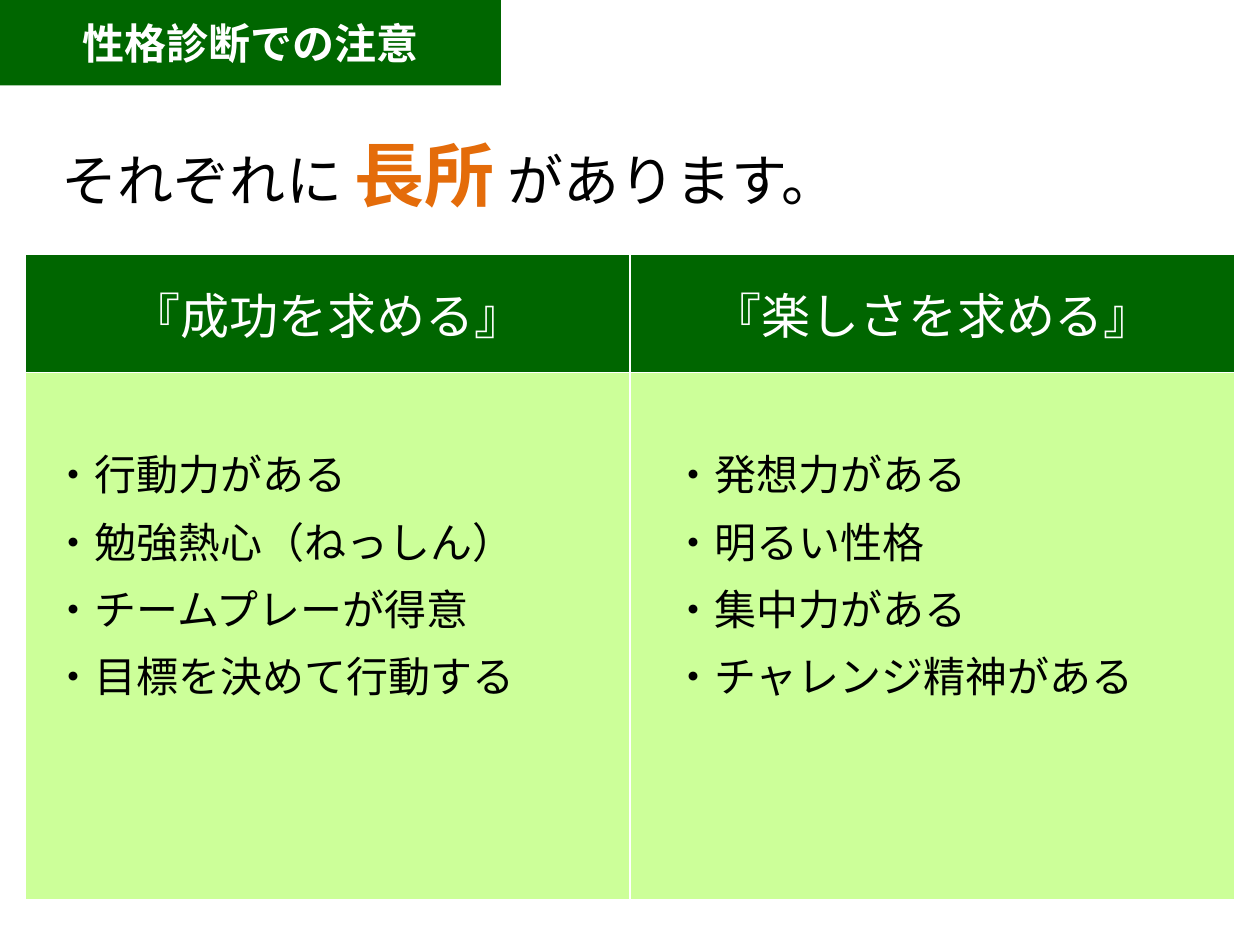
from dataclasses import dataclass
from lxml.etree import SubElement as Sub
from pptx import Presentation as Deck
from pptx.dml.color import RGBColor as Rgb
from pptx.enum.text import MSO_ANCHOR as Anchor, MSO_AUTO_SIZE as Fit, PP_ALIGN as Align
from pptx.oxml.ns import qn
from pptx.util import Cm, Pt


@dataclass(frozen=True)
class Theme:
    face: str = "Noto Sans CJK JP"
    white: str = "FFFFFF"
    black: str = "000000"
    green: str = "006600"
    pale: str = "CCFF99"
    orange: str = "E46C0A"
    small: int = 24
    head: int = 28
    lead: int = 32
    big: int = 40
    line: float = 28.8
    gap: float = 9.6


def apply(item, form):
    for key, value in form.items():
        setattr(item, key, value)


class Page:
    def __init__(self, theme, slide):
        self.theme, self.slide = theme, slide

    def place(self, shape, box):
        names = ("left", "top", "width", "height")
        apply(shape, dict(zip(names, map(Cm, box))))

    def frame(self, shape, anchor):
        form = {"word_wrap": True, "auto_size": Fit.NONE, "vertical_anchor": anchor}
        apply(shape.text_frame, form)
        return shape.text_frame

    def words(self, para, text, size, color, bold=False):
        run = para.add_run()
        run.text = text
        apply(run.font, {"name": self.theme.face, "size": Pt(size), "bold": bold})
        run.font.color.rgb = Rgb.from_string(color)
        Sub(run.font._element, qn("a:ea"), typeface=self.theme.face)

    def paint(self, item, color):
        item.fill.solid()
        item.fill.fore_color.rgb = Rgb.from_string(color)

    def title(self, text, box):
        shape = self.slide.shapes.title
        self.place(shape, box)
        self.paint(shape, self.theme.green)
        para = self.frame(shape, Anchor.MIDDLE).paragraphs[0]
        para.alignment = Align.CENTER
        self.words(para, text, self.theme.small, self.theme.white, True)

    def lead(self, parts, box):
        shape = self.slide.shapes.add_textbox(*map(Cm, box))
        para = self.frame(shape, Anchor.MIDDLE).paragraphs[0]
        for part in parts:
            self.words(para, *part)

    def list(self, index, lines, box):
        shape = self.slide.placeholders[index]
        self.place(shape, box)
        frame = self.frame(shape, Anchor.TOP)
        form = {"line_spacing": Pt(self.theme.line), "space_after": Pt(0)}
        for row, text in enumerate(lines):
            para = frame.add_paragraph() if row else frame.paragraphs[0]
            apply(para, form | {"space_before": Pt(self.theme.gap if row else 0)})
            props = para._p.get_or_add_pPr()
            props.set("marL", "0")
            props.set("indent", "0")
            Sub(props, qn("a:buNone"))
            self.words(para, text, self.theme.small, self.theme.black)

    def edge(self, cell):
        props = cell._tc.get_or_add_tcPr()
        for side in "LRTB":
            line = Sub(props, qn(f"a:ln{side}"), w=str(Pt(1)))
            fill = Sub(line, qn("a:solidFill"))
            Sub(fill, qn("a:srgbClr"), val=self.theme.white)

    def table(self, heads, box, rows):
        shape = self.slide.shapes.add_table(len(rows), len(heads), *map(Cm, box))
        tree = self.slide.shapes._spTree
        tree.insert(2, shape._element)
        grid = shape.table
        grid.horz_banding = False
        for row, high in zip(grid.rows, rows):
            row.height = Cm(high)
        for col, text in enumerate(heads):
            for row, color in enumerate((self.theme.green, self.theme.pale)):
                cell = grid.cell(row, col)
                self.edge(cell)
                self.paint(cell, color)
            top = grid.cell(0, col)
            top.vertical_anchor = Anchor.MIDDLE
            para = top.text_frame.paragraphs[0]
            para.alignment = Align.CENTER
            self.words(para, text, self.theme.head, self.theme.white)


def main():
    deck = Deck()
    apply(deck, {"slide_width": Cm(25.4), "slide_height": Cm(19.05)})
    theme = Theme()
    page = Page(theme, deck.slides.add_slide(deck.slide_layouts[3]))
    page.title("性格診断での注意", (0, 0, 10.1, 1.72))
    page.lead([
        ("それぞれに ", theme.lead, theme.black),
        ("長所", theme.big, theme.orange, True),
        (" があります。", theme.lead, theme.black),
    ], (1, 2.52, 23.4, 1.96))
    rows = (2.38, 10.62)
    page.table(["『成功を求める』", "『楽しさを求める』"], (0.5, 5.13, 24.4, sum(rows)), rows)
    page.list(1, ["・行動力がある", "・勉強熱心（ねっしん）", "・チームプレーが得意", "・目標を決めて行動する"],
              (0.8, 8.92, 11.5, 5.4))
    page.list(2, ["・発想力がある", "・明るい性格", "・集中力がある", "・チャレンジ精神がある"],
              (13.3, 8.92, 11.1, 5.4))
    deck.save("out.pptx")


if __name__ == "__main__":
    main()
